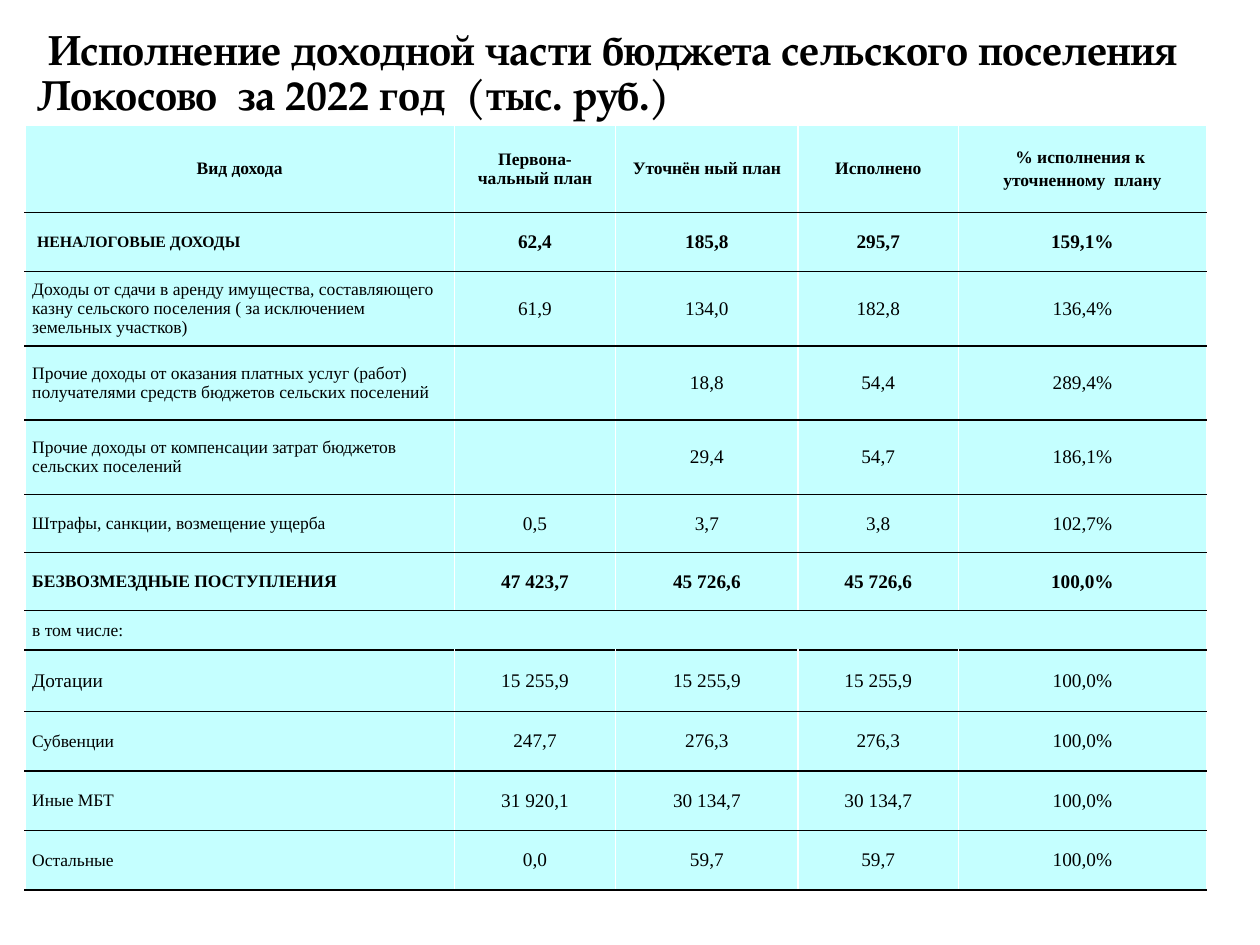
import pptx
import pptx.dml.color
import pptx.enum.text
import pptx.oxml
import pptx.oxml.ns
import pptx.util

Cm, Pt = pptx.util.Cm, pptx.util.Pt
ALIGN = pptx.enum.text.PP_ALIGN
MIDDLE = pptx.enum.text.MSO_ANCHOR.MIDDLE


def color(hex_string):
    return pptx.dml.color.RGBColor.from_string(hex_string)


def apply(target, values):
    for name, value in values.items():
        setattr(target, name, value)


class BudgetSlide:
    title_font = "TeX Gyre Pagella"
    table_font = "Times New Roman"
    ink, cell_fill, grid = "000000", "C5FFFF", "FFFFFF"
    roomy = dict(margin_left=Cm(0.25), margin_right=Cm(0.25),
                 margin_top=Cm(0.13), margin_bottom=Cm(0.13))
    tight = dict(margin_left=Cm(0.15), margin_right=Cm(0.15),
                 margin_top=0, margin_bottom=0)

    def __init__(self, deck):
        self.slide = deck.slides.add_slide(deck.slide_layouts[5])

    def add_text(self, paragraph, text, font, size, bold):
        run = paragraph.add_run()
        run.text = text
        apply(run.font, dict(name=font, size=Pt(size), bold=bold))
        run.font.color.rgb = color(self.ink)

    def title(self, text, left, top, width, height):
        heading = self.slide.shapes.title
        apply(heading, dict(left=Cm(left), top=Cm(top),
                            width=Cm(width), height=Cm(height)))
        frame = heading.text_frame
        apply(frame, dict(word_wrap=True, vertical_anchor=MIDDLE,
                          auto_size=pptx.enum.text.MSO_AUTO_SIZE.NONE,
                          margin_left=Cm(0.76), margin_right=0))
        paragraph = frame.paragraphs[0]
        apply(paragraph, dict(alignment=ALIGN.LEFT, line_spacing=0.9))
        # The first line starts slightly further right
        paragraph._p.get_or_add_pPr().set("indent", str(Cm(0.22)))
        self.add_text(paragraph, text, self.title_font, 24, True)

    def borders(self, cell, sides):
        properties = cell._tc.get_or_add_tcPr()
        for side, line_color in sides.items():
            properties.append(pptx.oxml.parse_xml(
                f'<a:ln{side} {pptx.oxml.ns.nsdecls("a")} w="12700">'
                f'<a:solidFill><a:srgbClr val="{line_color}"/></a:solidFill>'
                f'</a:ln{side}>'))

    def cell(self, cell, text, size, bold, align, margins, top_line, before):
        self.borders(cell, dict(L=self.grid, R=self.grid, T=top_line, B=self.ink))
        cell.fill.solid()
        cell.fill.fore_color.rgb = color(self.cell_fill)
        apply(cell, dict(margins, vertical_anchor=MIDDLE))
        for i, line in enumerate(text.split("\n") if text else []):
            frame = cell.text_frame
            paragraph = frame.add_paragraph() if i else frame.paragraphs[0]
            apply(paragraph, dict(alignment=align, space_before=Pt(before)))
            self.add_text(paragraph, line, self.table_font, size, bold)

    def table(self, rows, left, top, widths, heights, bold_rows, name_sizes, merged):
        table = self.slide.shapes.add_table(
            len(rows), len(widths), Cm(left), Cm(top),
            Cm(sum(widths)), Cm(sum(heights))).table
        for column, width in zip(table.columns, widths):
            column.width = Cm(width)
        for row, height in zip(table.rows, heights):
            row.height = Cm(height)
        for r, texts in enumerate(rows):
            header = r == 0
            for c, text in enumerate(texts):
                roomy = r < 2 or (c > 2 and r < merged)
                self.cell(
                    table.cell(r, c), text,
                    size=10 if header else 11 if c else name_sizes.get(r, 10),
                    bold=r in bold_rows,
                    align=ALIGN.CENTER if header or c else ALIGN.LEFT,
                    margins=self.roomy if roomy else self.tight,
                    top_line=self.grid if header else self.ink,
                    before=2 if r < 2 else 0)
        table.cell(merged, 0).merge(table.cell(merged, len(widths) - 1))


INCOME = [
    ("Вид дохода", "Первона-чальный план", "Уточнён ный план", "Исполнено",
     "% исполнения к \nуточненному  плану"),
    ("НЕНАЛОГОВЫЕ ДОХОДЫ", "62,4", "185,8", "295,7", "159,1%"),
    ("Доходы от сдачи в аренду имущества, составляющего казну сельского "
     "поселения ( за исключением земельных участков)",
     "61,9", "134,0", "182,8", "136,4%"),
    ("Прочие доходы от оказания платных услуг (работ) получателями средств "
     "бюджетов сельских поселений", "", "18,8", "54,4", "289,4%"),
    ("Прочие доходы от компенсации затрат бюджетов сельских поселений",
     "", "29,4", "54,7", "186,1%"),
    ("Штрафы, санкции, возмещение ущерба", "0,5", "3,7", "3,8", "102,7%"),
    ("БЕЗВОЗМЕЗДНЫЕ ПОСТУПЛЕНИЯ", "47 423,7", "45 726,6", "45 726,6", "100,0%"),
    ("в том числе:", "", "", "", ""),
    ("Дотации", "15 255,9", "15 255,9", "15 255,9", "100,0%"),
    ("Субвенции", "247,7", "276,3", "276,3", "100,0%"),
    ("Иные МБТ", "31 920,1", "30 134,7", "30 134,7", "100,0%"),
    ("Остальные", "0,0", "59,7", "59,7", "100,0%"),
]


def main():
    deck = pptx.Presentation()
    apply(deck, dict(slide_width=Cm(25.4), slide_height=Cm(19.05)))
    budget = BudgetSlide(deck)

    # Heading
    budget.title("Исполнение доходной части бюджета сельского поселения "
                 "Локосово  за 2022 год  (тыс. руб.)", 0, 0.41, 24.77, 2.18)

    # Income table
    budget.table(
        INCOME, left=0.5, top=2.53,
        widths=[8.66, 3.25, 3.68, 3.23, 5],
        heights=[1.75, 1.19] + [1.5] * 3 + [1.17] * 2 + [0.79, 1.24] + [1.2] * 3,
        bold_rows={0, 1, 6}, name_sizes={1: 9, 8: 11}, merged=7)

    deck.save("out.pptx")


if __name__ == "__main__":
    main()
